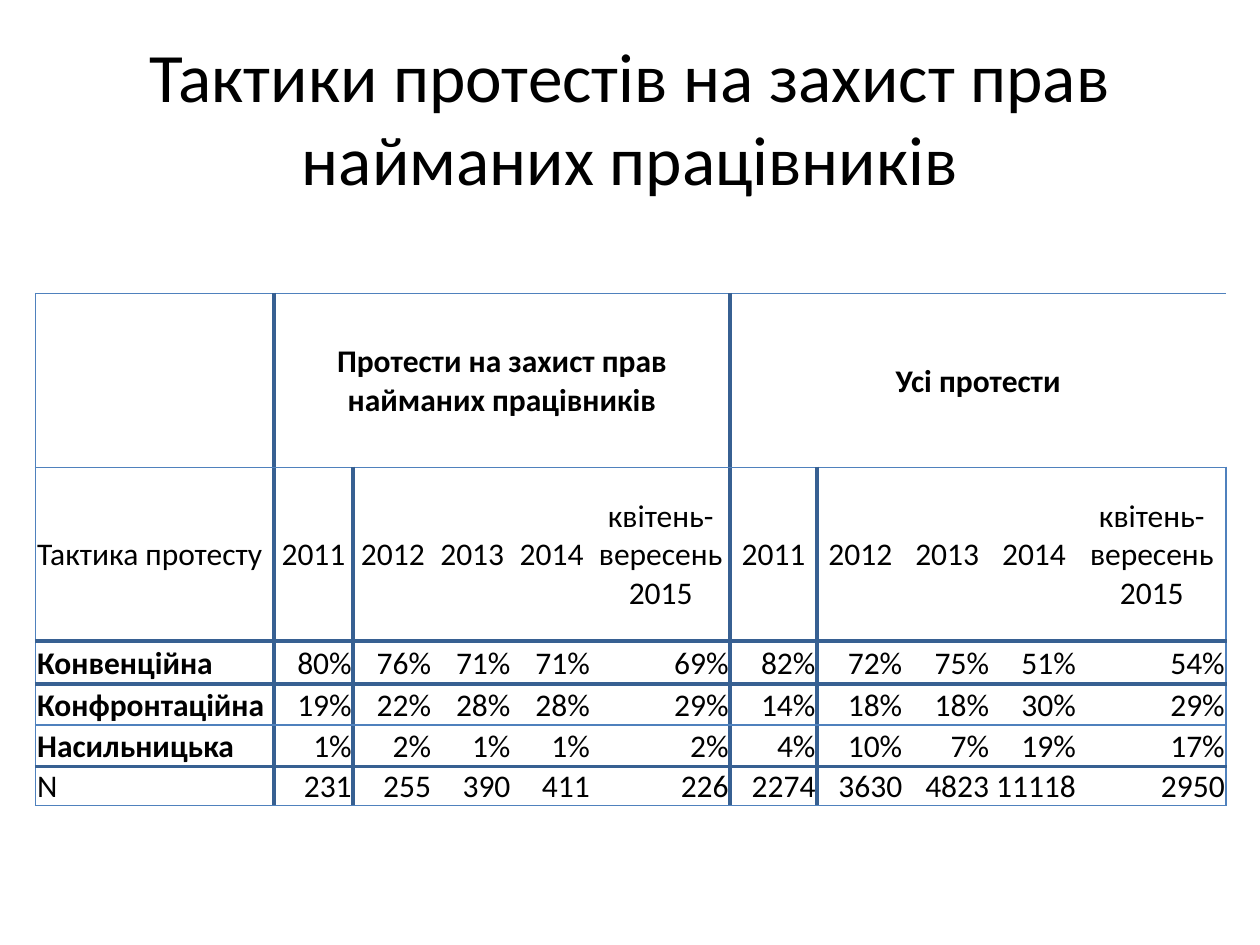
from lxml.etree import SubElement
from pptx import Presentation
from pptx.dml.color import RGBColor
from pptx.enum.text import MSO_ANCHOR, PP_ALIGN
from pptx.oxml.ns import qn
from pptx.util import Cm, Pt

BLACK = RGBColor(0, 0, 0)
WHITE = RGBColor(255, 255, 255)
BLUE = RGBColor(0x4F, 0x81, 0xBD)
NAVY = RGBColor(0x37, 0x60, 0x92)
THIN = (BLUE, 1)
THICK = (NAVY, 2.25)


def write(frame, text, size, bold, align):
    para = frame.paragraphs[0]
    para.alignment = align
    run = para.add_run()
    run.text = text
    style = {"name": "Calibri", "size": Pt(size), "bold": bold}
    for key, val in style.items():
        setattr(run.font, key, val)
    run.font.color.rgb = BLACK


def edge(cell, side, line):
    color, width = line or (None, 0)
    ln = SubElement(cell._tc.get_or_add_tcPr(), qn("a:ln" + side), w=str(int(Pt(width))))
    if color is None:
        SubElement(ln, qn("a:noFill"))
    else:
        fill = SubElement(ln, qn("a:solidFill"))
        SubElement(fill, qn("a:srgbClr"), val=str(color))


deck = Presentation()
deck.slide_width = Cm(25.4)
deck.slide_height = Cm(19.05)
slide = deck.slides.add_slide(deck.slide_layouts[6])

title = slide.shapes.add_textbox(Cm(1.27), Cm(0.76), Cm(22.86), Cm(3.18)).text_frame
for key, val in {"word_wrap": True, "vertical_anchor": MSO_ANCHOR.MIDDLE}.items():
    setattr(title, key, val)
write(title, "Тактики протестів на захист прав найманих працівників", 39.6, False, PP_ALIGN.CENTER)

years = ["2011", "2012", "2013", "2014", "квітень-вересень 2015"]
rows = [
    ["", "Протести на захист прав найманих працівників", "", "", "", "",
     "Усі протести", "", "", "", ""],
    ["Тактика протесту"] + years * 2,
    ["Конвенційна", "80%", "76%", "71%", "71%", "69%", "82%", "72%", "75%", "51%", "54%"],
    ["Конфронтаційна", "19%", "22%", "28%", "28%", "29%", "14%", "18%", "18%", "30%", "29%"],
    ["Насильницька", "1%", "2%", "1%", "1%", "2%", "4%", "10%", "7%", "19%", "17%"],
    ["N", "231", "255", "390", "411", "226", "2274", "3630", "4823", "11118", "2950"],
]
wide = [4.8] + [1.6] * 4 + [2.8] + [1.75] * 4 + [3]
high = [3.5, 3.5, 0.87, 0.83, 0.83, 0.79]
flat = [THIN, THIN, THICK, THICK, THIN, THICK, THIN]
tall = {0: THIN, 1: THICK, 2: THICK, 6: THICK, 7: THICK, 11: THIN}

grid = slide.shapes.add_table(
    len(rows), len(wide), Cm(0.72), Cm(5.92), Cm(sum(wide)), Cm(sum(high))).table
for key, val in {"first_row": False, "horz_banding": False}.items():
    setattr(grid, key, val)
for col, size in zip(grid.columns, wide):
    col.width = Cm(size)
for row, size in zip(grid.rows, high):
    row.height = Cm(size)
for left in (1, 6):
    grid.cell(0, left).merge(grid.cell(0, left + 4))

form = {
    "margin_left": Cm(0.03), "margin_right": Cm(0.03), "margin_top": Cm(0.03),
    "margin_bottom": 0, "vertical_anchor": MSO_ANCHOR.MIDDLE,
}
for r, row in enumerate(rows):
    for c, text in enumerate(row):
        cell = grid.cell(r, c)
        for key, val in form.items():
            setattr(cell, key, val)
        for side, at in (("L", c), ("R", c + 1)):
            edge(cell, side, None if r == 0 and at in (2, 7) else tall.get(at))
        for side, at in (("T", r), ("B", r + 1)):
            edge(cell, side, flat[at])
        cell.fill.solid()
        cell.fill.fore_color.rgb = WHITE
        if text:
            bold = r == 0 or (c == 0 and r in (2, 3, 4))
            align = PP_ALIGN.CENTER if r < 2 else PP_ALIGN.RIGHT
            write(cell.text_frame, text, 18, bold, align if c else PP_ALIGN.LEFT)

deck.save("out.pptx")
